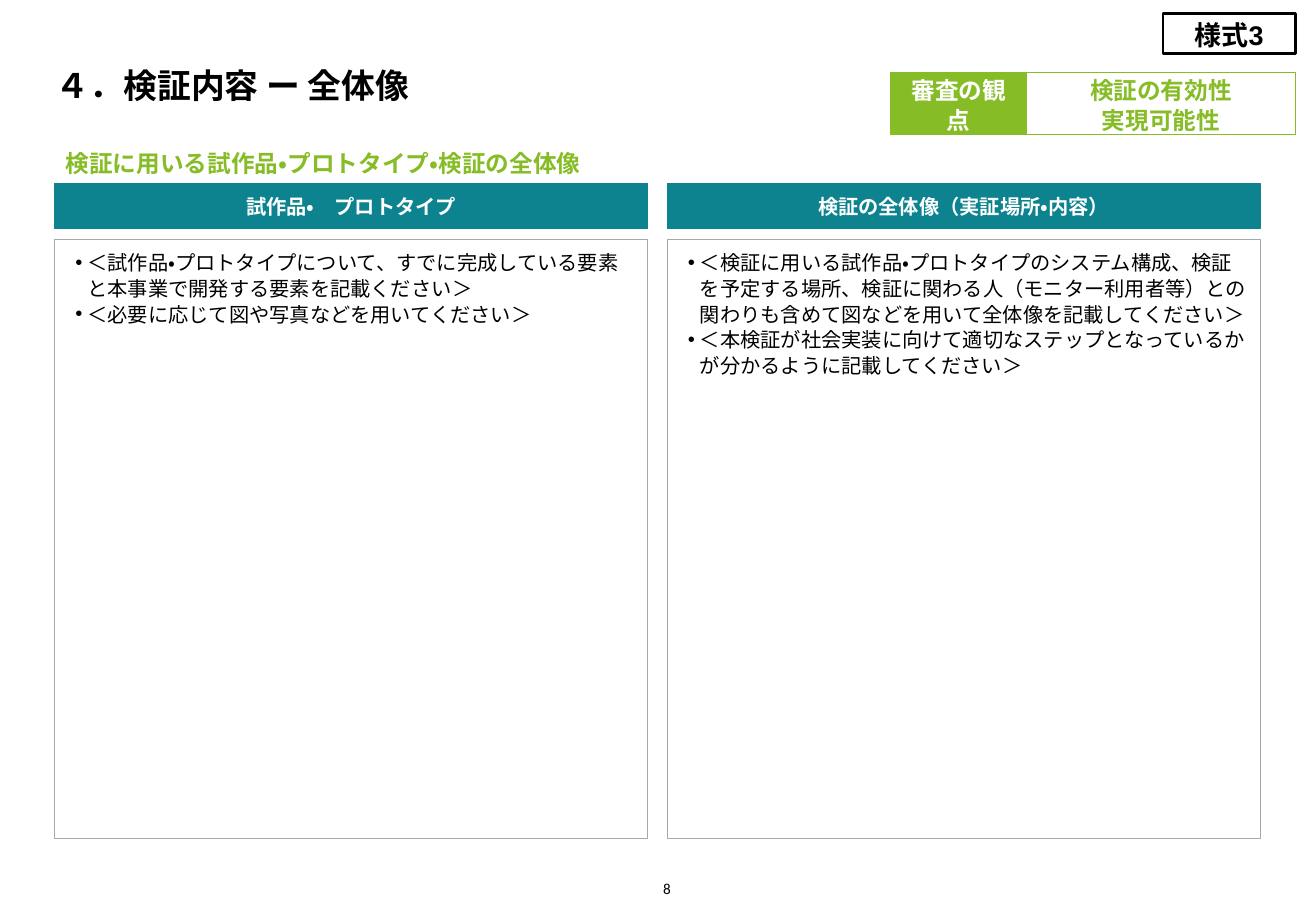
"""Build the verification overview slide with two content columns."""
from dataclasses import dataclass

from lxml.etree import SubElement
from pptx import Presentation
from pptx.dml.color import RGBColor
from pptx.enum.lang import MSO_LANGUAGE_ID as Language
from pptx.enum.shapes import MSO_SHAPE as Shape
from pptx.enum.text import MSO_ANCHOR as Anchor, PP_ALIGN as Align
from pptx.oxml.ns import qn
from pptx.util import Pt

TITLE = "４．検証内容 ー 全体像"
SUBTITLE = "検証に用いる試作品・プロトタイプ・検証の全体像"
FORM_LABEL = "様式3"
PAGE_NUMBER = "8"
VIEWPOINT_LABEL = "審査の観点"
VIEWPOINTS = ["検証の有効性", "実現可能性"]
COLUMNS = [
    ("試作品・　プロトタイプ", [
        [("＜", "Arial"),
         ("試作品・プロトタイプについて、すでに完成している要素と本事業で開発する要素を記載ください", "Calibri"),
         ("＞", "Arial")],
        [("＜必要に応じて図や写真などを用いてください＞", "Arial")],
    ]),
    ("検証の全体像（実証場所・内容）", [
        [("＜検証に用いる試作品・プロトタイプのシステム構成、検証を予定する場所、"
          "検証に関わる人（モニター利用者等）との関わりも含めて"
          "図などを用いて全体像を記載してください＞", "Calibri")],
        [("＜本検証が社会実装に向けて適切なステップとなっているかが分かるように記載してください＞", "Calibri")],
    ]),
]


@dataclass(frozen=True)
class Theme:
    """Colours, type sizes and fonts of the slide."""
    black: str = "000000"
    white: str = "FFFFFF"
    green: str = "86BC25"
    teal: str = "0D8390"
    grey: str = "A7A8AA"
    title: int = 20
    form: int = 16
    label: int = 14
    body: int = 12
    page: int = 9
    heading_font: str = "Calibri"
    box_font: str = "Arial"


THEME = Theme()
PX = 9144
SLIDE_SIZE = (1083, 750)
COLUMN_LEFT, COLUMN_WIDTH, COLUMN_GAP = 45, 488, 16
HEADER_TOP, HEADER_HEIGHT = 151, 37
BODY_TOP, BODY_HEIGHT = 197, 493
VIEWPOINT_LEFT, VIEWPOINT_TOP, VIEWPOINT_HEIGHT = 733, 60, 51
LABEL_WIDTH, CRITERIA_WIDTH = 112, 221
INSET, BULLET_INDENT, BULLET_HANG = 8, 19, 10
LINE_SPACING = 1.06


def emu(*lengths):
    return [length * PX for length in lengths]


def plain(lines, font):
    return [[(line, font)] for line in lines]


def set_bullet(paragraph):
    properties = paragraph._p.get_or_add_pPr()
    properties.set("marL", str(BULLET_INDENT * PX))
    properties.set("indent", str(-BULLET_HANG * PX))
    SubElement(properties, qn("a:buFont"), typeface="Arial")
    SubElement(properties, qn("a:buChar"), char="•")


def write(shape, paragraphs, size, color, insets, anchor, align,
          bold=True, spacing=None, bullets=False, wrap=True):
    frame = shape.text_frame
    frame.word_wrap = wrap
    frame.vertical_anchor = anchor
    (frame.margin_left, frame.margin_top,
     frame.margin_right, frame.margin_bottom) = emu(*insets)
    for index, runs in enumerate(paragraphs):
        paragraph = frame.add_paragraph() if index else frame.paragraphs[0]
        paragraph.alignment = align
        if spacing:
            paragraph.line_spacing = spacing
        if bullets:
            set_bullet(paragraph)
        for text, font in runs:
            run = paragraph.add_run()
            run.text = text
            run.font.name = font
            run.font.size = Pt(size)
            run.font.bold = bold
            run.font.color.rgb = RGBColor.from_string(color)
            run.font.language_id = Language.JAPANESE


def add_label(slide, box, text, size, color, anchor, align=Align.LEFT,
              left_inset=0, bold=True, wrap=True):
    shape = slide.shapes.add_textbox(*emu(*box))
    write(shape, plain([text], THEME.heading_font), size, color,
          (left_inset, 0, 0, 0), anchor, align, bold=bold, wrap=wrap)


def add_box(shapes, box, paragraphs, size, color, fill, line, line_width=0.5,
            anchor=Anchor.MIDDLE, align=Align.CENTER, bold=True, bullets=False):
    shape = shapes.add_shape(Shape.RECTANGLE, *emu(*box))
    shape.shadow.inherit = False
    shape.fill.solid()
    shape.fill.fore_color.rgb = RGBColor.from_string(fill)
    shape.line.color.rgb = RGBColor.from_string(line)
    shape.line.width = Pt(line_width)
    write(shape, paragraphs, size, color, (INSET,) * 4, anchor, align,
          bold, LINE_SPACING, bullets)


def add_viewpoints(slide):
    shapes = slide.shapes.add_group_shape().shapes
    criteria_left = VIEWPOINT_LEFT + LABEL_WIDTH
    add_box(shapes, (criteria_left, VIEWPOINT_TOP, CRITERIA_WIDTH, VIEWPOINT_HEIGHT),
            plain(VIEWPOINTS, THEME.box_font), THEME.label,
            THEME.green, THEME.white, THEME.green)
    add_box(shapes, (VIEWPOINT_LEFT, VIEWPOINT_TOP, LABEL_WIDTH, VIEWPOINT_HEIGHT),
            plain([VIEWPOINT_LABEL], THEME.box_font), THEME.label,
            THEME.white, THEME.green, THEME.green)


def add_columns(slide):
    for index, (header, body) in enumerate(COLUMNS):
        left = COLUMN_LEFT + index * (COLUMN_WIDTH + COLUMN_GAP)
        add_box(slide.shapes, (left, HEADER_TOP, COLUMN_WIDTH, HEADER_HEIGHT),
                plain([header], THEME.box_font), THEME.body,
                THEME.white, THEME.teal, THEME.teal)
        add_box(slide.shapes, (left, BODY_TOP, COLUMN_WIDTH, BODY_HEIGHT),
                body, THEME.body, THEME.black, THEME.white, THEME.grey,
                anchor=Anchor.TOP, align=Align.LEFT, bold=False, bullets=True)


def main():
    presentation = Presentation()
    presentation.slide_width, presentation.slide_height = emu(*SLIDE_SIZE)
    slide = presentation.slides.add_slide(presentation.slide_layouts[6])
    add_label(slide, (532, 720, 20, 19), PAGE_NUMBER, THEME.page, THEME.black,
              Anchor.BOTTOM, Align.RIGHT, bold=False, wrap=False)
    add_box(slide.shapes, (957, 11, 109, 33), plain([FORM_LABEL], THEME.box_font),
            THEME.form, THEME.black, THEME.white, THEME.black, line_width=1.5)
    add_label(slide, (46, 20, 992, 67), TITLE, THEME.title, THEME.black, Anchor.BOTTOM)
    add_label(slide, (46, 111, 476, 47), SUBTITLE, THEME.label, THEME.green,
              Anchor.MIDDLE, left_inset=INSET, wrap=False)
    add_viewpoints(slide)
    add_columns(slide)
    presentation.save("out.pptx")


if __name__ == "__main__":
    main()
